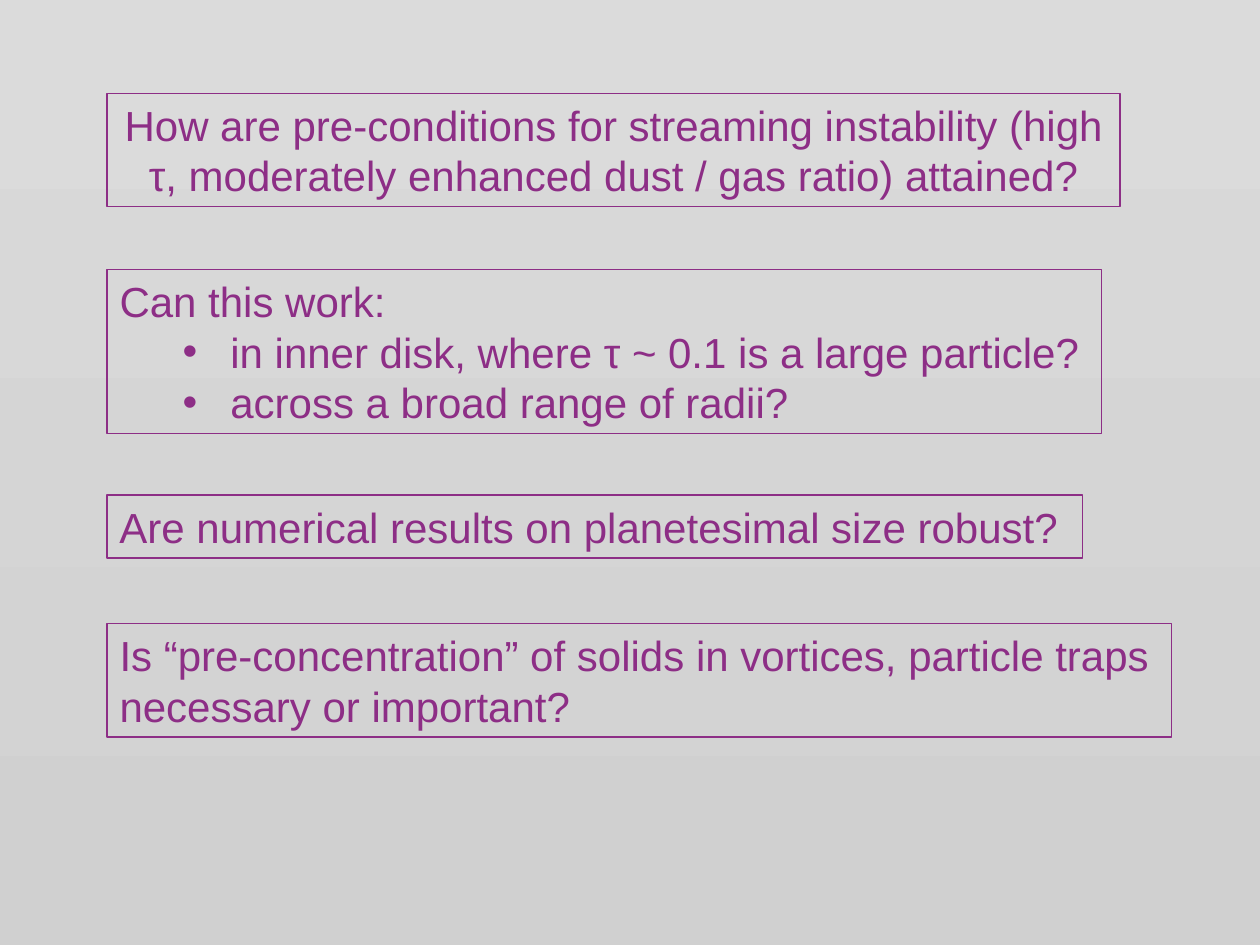
from lxml import etree
from pptx import Presentation
from pptx import util as u
from pptx.dml.color import RGBColor
from pptx.enum import shapes, text
from pptx.oxml.ns import qn

PURPLE = RGBColor(0x8D, 0x2E, 0x86)
LIGHT = RGBColor(0xDB, 0xDB, 0xDB)
DARK = RGBColor(0xD0, 0xD0, 0xD0)

WIDTH, HEIGHT = u.Inches(10), u.Inches(7.5)
LEFT = 0.085  # shared left edge, as a share of the slide width
PAD, ROW = u.Inches(0.1), u.Inches(0.4)  # box padding, text line height
LEFT_AL, MID_AL = text.PP_ALIGN.LEFT, text.PP_ALIGN.CENTER

# Top in inches, width as a share of the slide, alignment, lines, bullets
BOXES = [
    (0.74, 0.804, MID_AL,
     ["How are pre-conditions for streaming instability (high ",
      "τ, moderately enhanced dust / gas ratio) attained?"], []),
    (2.14, 0.789, LEFT_AL, ["Can this work:"],
     ["in inner disk, where τ ~ 0.1 is a large particle?",
      "across a broad range of radii?"]),
    (3.93, 0.774, LEFT_AL,
     ["Are numerical results on planetesimal size robust?"], []),
    (4.95, 0.845, LEFT_AL,
     ["Is “pre-concentration” of solids in vortices, particle traps",
      "necessary or important?"], []),
]


def shade(slide):
    """Fill the background with a top-to-bottom gradient."""
    fill = slide.background.fill
    fill.gradient()
    fill.gradient_angle = 270
    for stop, color in zip(fill.gradient_stops, (LIGHT, DARK)):
        stop.color.rgb = color


def add_bullet(para):
    """Indent a paragraph behind a round bullet."""
    para.level = 1
    props = para._p.get_or_add_pPr()
    props.set("marL", str(u.Inches(0.88)))
    props.set("indent", str(u.Inches(-0.38)))
    etree.SubElement(props, qn("a:buFont")).set("typeface", "Arial")
    etree.SubElement(props, qn("a:buChar")).set("char", "•")


def add_box(slide, top, share, align, lines, points):
    """Add an outlined box of plain lines followed by bullet points."""
    rows = lines + points
    box = slide.shapes.add_shape(
        shapes.MSO_SHAPE.RECTANGLE, int(LEFT * WIDTH), u.Inches(top),
        int(share * WIDTH), PAD + len(rows) * ROW)
    box.shadow.inherit = False
    box.fill.background()
    box.line.color.rgb = PURPLE
    box.line.width = u.Pt(0.75)

    frame = box.text_frame
    frame.text = "\n".join(rows)
    frame.word_wrap = False
    frame.auto_size = text.MSO_AUTO_SIZE.SHAPE_TO_FIT_TEXT
    frame.vertical_anchor = text.MSO_ANCHOR.TOP
    for para in frame.paragraphs:
        para.alignment = align
        font = para.runs[0].font
        font.name, font.size = "Arial", u.Pt(24)
        font.color.rgb = PURPLE
    for para in frame.paragraphs[len(lines):]:
        add_bullet(para)


def main():
    deck = Presentation()
    deck.slide_width, deck.slide_height = WIDTH, HEIGHT
    slide = deck.slides.add_slide(deck.slide_layouts[6])
    shade(slide)
    # Open questions, from top to bottom
    for box in BOXES:
        add_box(slide, *box)
    deck.save("out.pptx")


if __name__ == "__main__":
    main()
